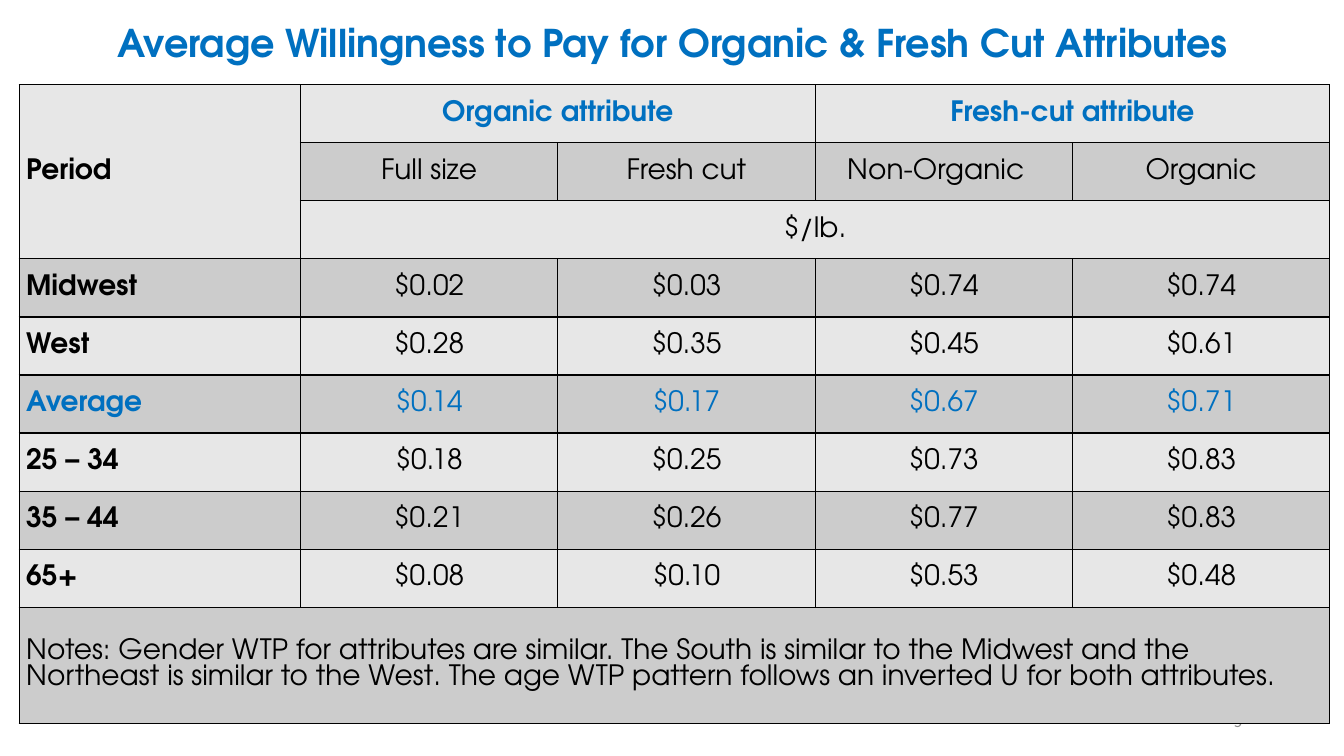
import pptx
import pptx.dml.color
import pptx.enum.text
import pptx.oxml
import pptx.oxml.ns
import pptx.util
from dataclasses import dataclass

Inches = pptx.util.Inches
ALIGN = pptx.enum.text.PP_ALIGN
MIDDLE = pptx.enum.text.MSO_ANCHOR.MIDDLE

TITLE = "Average Willingness to Pay for Organic & Fresh Cut Attributes"
PAGE_NUMBER = "5"
HEADER = [
    ["Period", "Organic attribute", "", "Fresh-cut attribute", ""],
    ["", "Full size", "Fresh cut", "Non-Organic", "Organic"],
    ["", "$/lb.", "", "", ""],
]
WILLINGNESS = [
    ("Midwest", 0.02, 0.03, 0.74, 0.74),
    ("West", 0.28, 0.35, 0.45, 0.61),
    ("Average", 0.14, 0.17, 0.67, 0.71),
    ("25 – 34", 0.18, 0.25, 0.73, 0.83),
    ("35 – 44", 0.21, 0.26, 0.77, 0.83),
    ("65+", 0.08, 0.10, 0.53, 0.48),
]
NOTES = (
    "Notes: Gender WTP for attributes are similar. The South is similar to the "
    "Midwest and the Northeast is similar to the West. The age WTP pattern "
    "follows an inverted U for both attributes."
)
MERGES = [((0, 0), (2, 0)), ((0, 1), (0, 2)), ((0, 3), (0, 4)),
          ((2, 1), (2, 4)), ((9, 0), (9, 4))]

TABLE_LEFT, TABLE_TOP, TABLE_WIDTH, TABLE_HEIGHT = 0.19, 0.84, 13, 6.34
LABEL_WIDTH = 2.79
CELL_MARGIN = 0.07
SHIFTED_MARGIN = 0.23


@dataclass(frozen=True)
class Theme:
    font: str = "TeX Gyre Adventor"
    number_font: str = "Calibri"
    title_size: float = 27.3
    table_size: float = 20
    number_size: float = 12
    accent: str = "0070C0"
    ink: str = "000000"
    muted: str = "8C8C8C"
    bands: tuple = ("E7E7E7", "CCCCCC")


THEME = Theme()


def rgb(value):
    return pptx.dml.color.RGBColor.from_string(value)


def write(frame, text, *, size=THEME.table_size, font=THEME.font, color=THEME.ink,
          bold=False, align=ALIGN.LEFT, spacing=None):
    paragraph = frame.paragraphs[0]
    paragraph.alignment = align
    paragraph.line_spacing = spacing
    run = paragraph.add_run()
    run.text = text
    run.font.size = pptx.util.Pt(size)
    run.font.name = font
    run.font.bold = bold
    run.font.color.rgb = rgb(color)


def add_borders(cell):
    properties = cell._tc.get_or_add_tcPr()
    for index, side in enumerate(("lnL", "lnR", "lnT", "lnB")):
        properties.insert(index, pptx.oxml.parse_xml(
            f'<a:{side} {pptx.oxml.ns.nsdecls("a")} w="12700"><a:solidFill>'
            f'<a:srgbClr val="{THEME.ink}"/></a:solidFill></a:{side}>'))


def add_title(slide):
    title = slide.shapes.title
    title.left, title.top = Inches(0.28), Inches(0.19)
    title.width, title.height = Inches(12.78), Inches(0.51)
    frame = title.text_frame
    frame.auto_size = pptx.enum.text.MSO_AUTO_SIZE.NONE
    frame.vertical_anchor = MIDDLE
    write(frame, TITLE, size=THEME.title_size, color=THEME.accent, bold=True,
          align=ALIGN.CENTER, spacing=0.9)


def add_page_number(slide):
    box = slide.shapes.add_textbox(Inches(9.42), Inches(6.95), Inches(3), Inches(0.4))
    box.text_frame.word_wrap = True
    box.text_frame.vertical_anchor = MIDDLE
    write(box.text_frame, PAGE_NUMBER, size=THEME.number_size,
          font=THEME.number_font, color=THEME.muted, align=ALIGN.RIGHT)


def add_willingness_table(slide):
    values = [[label] + [f"${price:.2f}" for price in prices]
              for label, *prices in WILLINGNESS]
    rows = HEADER + values + [[NOTES, "", "", "", ""]]
    row_count, column_count = len(rows), len(rows[0])
    table = slide.shapes.add_table(
        row_count, column_count, Inches(TABLE_LEFT), Inches(TABLE_TOP),
        Inches(TABLE_WIDTH), Inches(TABLE_HEIGHT)).table
    table.first_row = table.horz_banding = False

    value_width = (TABLE_WIDTH - LABEL_WIDTH) / (column_count - 1)
    for index, column in enumerate(table.columns):
        column.width = Inches(value_width if index else LABEL_WIDTH)
    row_height = TABLE_HEIGHT / (row_count + 1)
    for index, row in enumerate(table.rows):
        row.height = Inches(row_height * (2 if index == row_count - 1 else 1))

    for row_index, texts in enumerate(rows):
        for column_index, text in enumerate(texts):
            cell = table.cell(row_index, column_index)
            cell.fill.solid()
            cell.fill.fore_color.rgb = rgb(THEME.bands[row_index % 2])
            add_borders(cell)
            cell.vertical_anchor = MIDDLE
            cell.margin_top = cell.margin_bottom = 0
            cell.margin_left = Inches(CELL_MARGIN)
            cell.margin_right = Inches(
                SHIFTED_MARGIN if text == "Non-Organic" else CELL_MARGIN)
            if text:
                is_label = column_index == 0
                is_group = row_index == 0 and not is_label
                highlighted = is_group or texts[0] == "Average"
                write(cell.text_frame, text,
                      color=THEME.accent if highlighted else THEME.ink,
                      bold=is_group or (is_label and text != NOTES),
                      align=ALIGN.LEFT if is_label else ALIGN.CENTER)
    for first, last in MERGES:
        table.cell(*first).merge(table.cell(*last))


def main():
    presentation = pptx.Presentation()
    presentation.slide_width = Inches(13.33)
    presentation.slide_height = Inches(7.5)
    slide = presentation.slides.add_slide(presentation.slide_layouts[5])
    add_title(slide)
    add_page_number(slide)
    add_willingness_table(slide)
    presentation.save("out.pptx")


if __name__ == "__main__":
    main()
